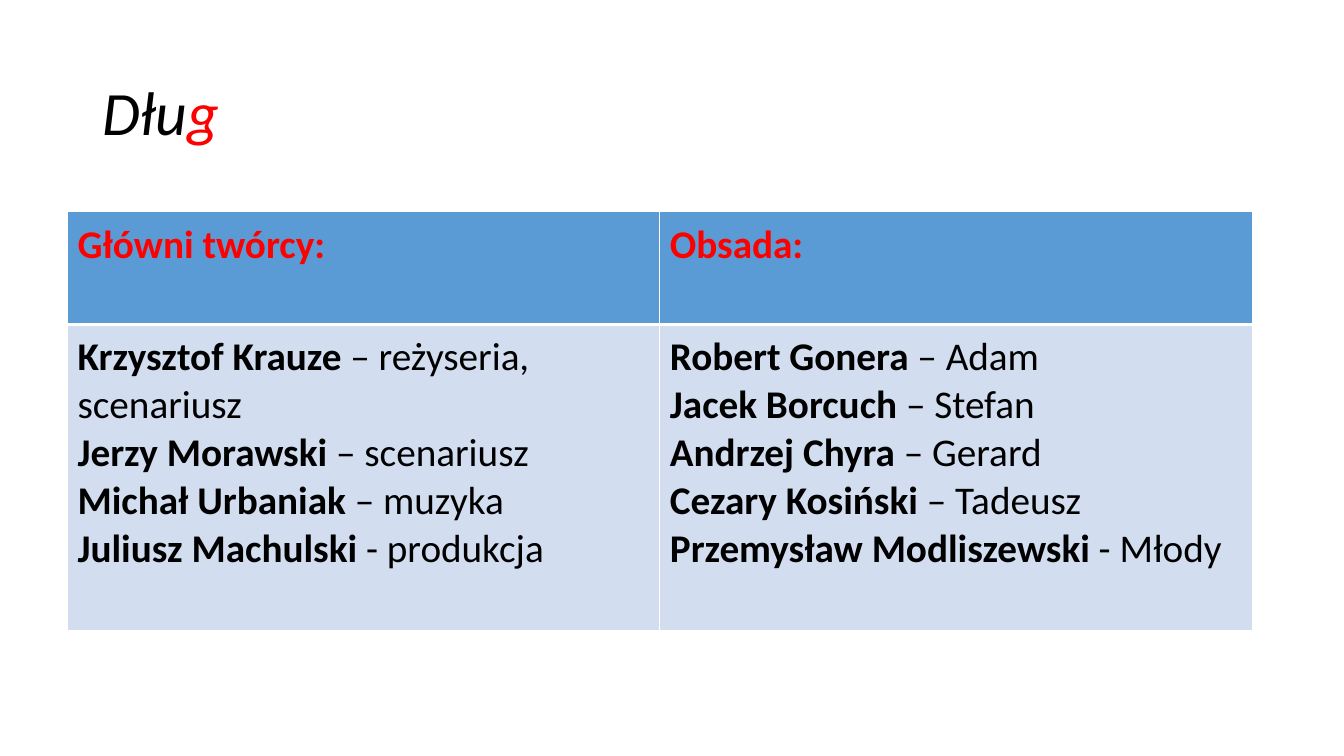
from lxml.etree import SubElement
from pptx import Presentation
from pptx.dml.color import RGBColor
from pptx.enum.text import MSO_ANCHOR as Anchor
from pptx.oxml.ns import qn
from pptx.util import Inches, Pt

COLORS = {
    "text": "000000",
    "accent": "FF0000",
    "header": "5B9BD5",
    "body": "D2DEEF",
    "border": "FFFFFF",
}
FONT = "Calibri"

HEADINGS = ["Główni twórcy:", "Obsada:"]
CREATORS = [
    ("Krzysztof Krauze ", "– reżyseria, scenariusz"),
    ("Jerzy Morawski ", "– scenariusz"),
    ("Michał Urbaniak ", "– muzyka"),
    ("Juliusz Machulski ", "- produkcja"),
]
CAST = [
    ("Robert Gonera ", "– Adam"),
    ("Jacek Borcuch ", "– Stefan"),
    ("Andrzej Chyra ", "– Gerard"),
    ("Cezary Kosiński ", "– Tadeusz"),
    ("Przemysław Modliszewski ", "- Młody"),
]


def add_run(paragraph, words, size, color, bold=False, italic=False):
    run = paragraph.add_run()
    run.text = words
    run.font.name = FONT
    run.font.size = Pt(size)
    run.font.bold = bold
    run.font.italic = italic
    run.font.color.rgb = RGBColor.from_string(COLORS[color])


def add_title(slide, left, top, width, height):
    title = slide.shapes.add_textbox(
        Inches(left), Inches(top), Inches(width), Inches(height)
    ).text_frame
    title.word_wrap = True
    title.vertical_anchor = Anchor.MIDDLE
    line = title.paragraphs[0]
    line.line_spacing = 0.9
    add_run(line, "Dłu", 44, "text", italic=True)
    add_run(line, "g", 44, "accent", italic=True)


def style_cell(cell, fill, borders):
    properties = cell._tc.get_or_add_tcPr()
    for side, points in borders.items():
        border = SubElement(properties, qn(f"a:ln{side}"), w=str(Pt(points)))
        solid = SubElement(border, qn("a:solidFill"))
        SubElement(solid, qn("a:srgbClr"), val=COLORS["border"])
    cell.fill.solid()
    cell.fill.fore_color.rgb = RGBColor.from_string(COLORS[fill])
    cell.vertical_anchor = Anchor.TOP
    cell.margin_top = Inches(0.09)


def fill_people(cell, people):
    frame = cell.text_frame
    for index, (person, role) in enumerate(people):
        line = frame.add_paragraph() if index else frame.paragraphs[0]
        add_run(line, person, 28, "text", bold=True)
        add_run(line, role, 28, "text")


def add_credits(slide, left, top, width, height):
    credits = slide.shapes.add_table(
        2, 2, Inches(left), Inches(top), Inches(width), Inches(height)
    ).table
    header_height = 1.12
    credits.rows[0].height = Inches(header_height)
    credits.rows[1].height = Inches(height - header_height)
    for column, (heading, people) in enumerate(zip(HEADINGS, [CREATORS, CAST])):
        header, body = credits.cell(0, column), credits.cell(1, column)
        style_cell(header, "header", {"L": 1, "R": 1, "T": 1, "B": 3})
        style_cell(body, "body", {"L": 1, "R": 1, "T": 3, "B": 1})
        add_run(header.text_frame.paragraphs[0], heading, 28, "accent", bold=True)
        fill_people(body, people)


def main():
    deck = Presentation()
    deck.slide_width = Inches(13.33)
    deck.slide_height = Inches(7.5)
    slide = deck.slides.add_slide(deck.slide_layouts[6])
    add_title(slide, 0.92, 0.42, 11.5, 1.45)
    add_credits(slide, 0.67, 2.1, 11.75, 4.16)
    deck.save("out.pptx")


if __name__ == "__main__":
    main()
